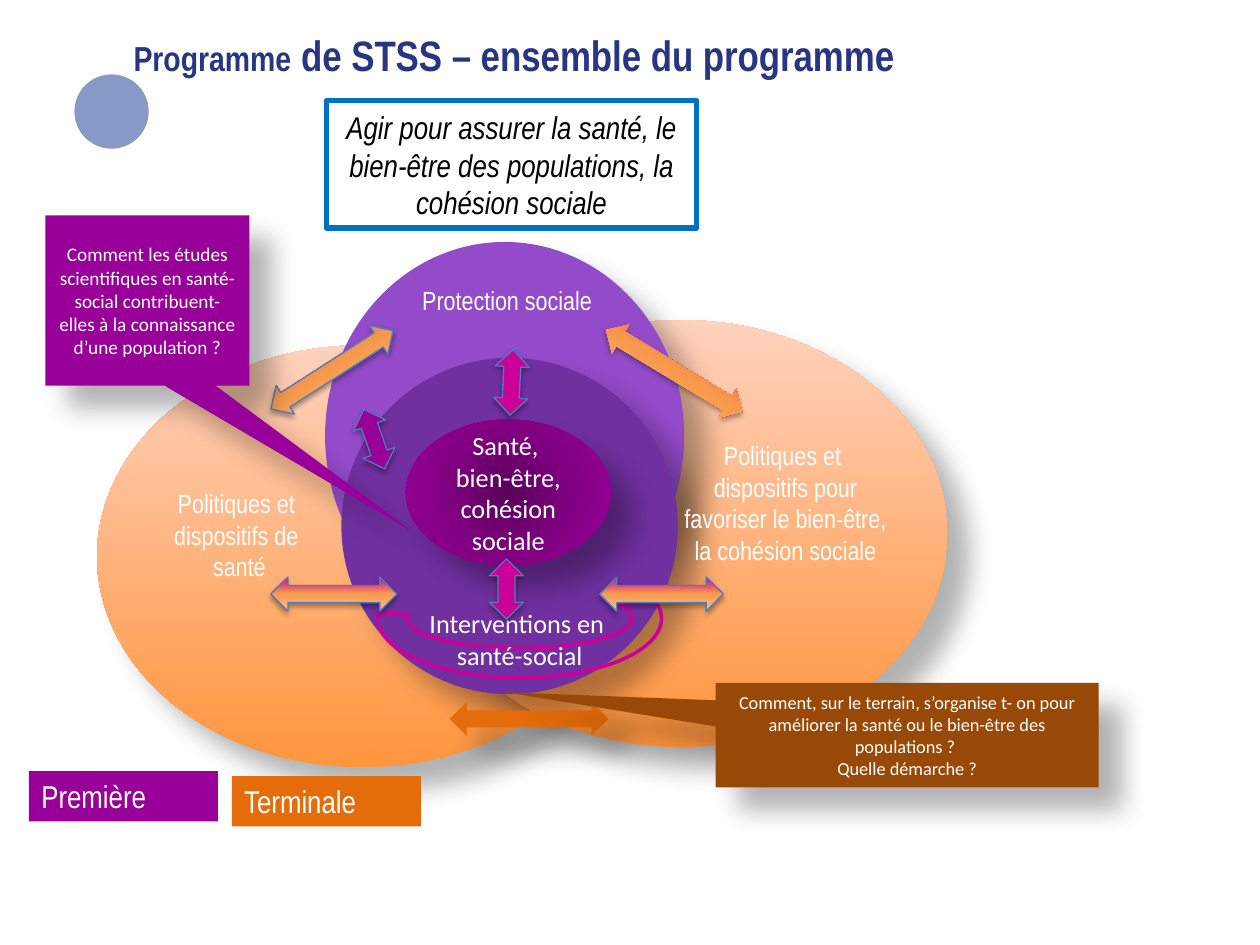
from pptx import Presentation
from pptx.dml.color import RGBColor
from pptx.enum.shapes import MSO_SHAPE
from pptx.enum.text import MSO_ANCHOR, MSO_AUTO_SIZE, PP_ALIGN
from pptx.oxml import parse_xml
from pptx.oxml.ns import nsdecls, qn
from pptx.util import Inches, Pt

COLS, ROWS = 100, 75
WIDTH, HEIGHT = Inches(10), Inches(7.5)
NARROW, CALIBRI = "Arial Narrow", "Calibri"
PURPLE, PINK, ORANGE, WHITE, BLUE = "990099", "CC0099", "E46C0A", "FFFFFF", "4B7EBC"
PEACH = [(0, "FF953E"), (100, "FFD2BD")]
SUNSET = [(0, PINK), (48, "F7994C"), (100, "FAC090")]
PLUM = [(0, "5B005B"), (50, "810081"), (100, PURPLE)]
DEEP, SOFT = (30, 15, 18, 45), (35, 3.1, 1.8, 90)


def rgb(value):
    """Turn a hex string into a colour."""
    return RGBColor.from_string(value)


def place(box, x, y, w, h):
    """Convert grid units relative to a box into slide lengths."""
    col, row = WIDTH / COLS, HEIGHT / ROWS
    return [int(v) for v in ((box[0] + x) * col, (box[1] + y) * row, w * col, h * row)]


def set_gradient(sp, stops, radial):
    """Fill a shape with a vertical or a radial gradient."""
    sp.fill.solid()
    old = sp._element.spPr.find(qn("a:solidFill"))
    marks = "".join(f'<a:gs pos="{pos * 1000}"><a:srgbClr val="{c}"/></a:gs>' for pos, c in stops)
    way = ('<a:path path="circle"><a:fillToRect l="50000" t="50000" r="50000" b="50000"/></a:path>'
           if radial else '<a:lin ang="16200000" scaled="0"/>')
    xml = f'<a:gradFill {nsdecls("a")} rotWithShape="1"><a:gsLst>{marks}</a:gsLst>{way}</a:gradFill>'
    old.getparent().replace(old, parse_xml(xml))


def set_shadow(sp, shadow):
    """Give a shape an outer shadow, or none."""
    sp.shadow.inherit = False
    if shadow:
        alpha, blur, dist, angle = shadow
        sp._element.spPr.find(qn("a:effectLst")).append(parse_xml(
            f'<a:outerShdw {nsdecls("a")} blurRad="{Pt(blur)}" dist="{Pt(dist)}" '
            f'dir="{angle * 60000}" algn="ctr" rotWithShape="0"><a:srgbClr val="000000">'
            f'<a:alpha val="{alpha * 1000}"/></a:srgbClr></a:outerShdw>'))


def add_part(s, kind, where, fill=None, line=None, shadow=None, adj=(), rotation=0, radial=False):
    """Add a preset shape with its fill, line, shadow and adjustments."""
    sp = s.shapes.add_shape(kind, *where)
    sp.rotation = rotation
    for i, value in enumerate(adj):
        sp.adjustments[i] = value
    if isinstance(fill, list):
        set_gradient(sp, fill, radial)
    elif fill:
        sp.fill.solid()
        sp.fill.fore_color.rgb = rgb(fill)
    else:
        sp.fill.background()
    if line:
        sp.line.color.rgb = rgb(line[0])
        sp.line.width = Pt(line[1])
    else:
        sp.line.fill.background()
    set_shadow(sp, shadow)
    return sp


def write(sp, paragraphs, size, font, color=WHITE, align=PP_ALIGN.CENTER,
          anchor=MSO_ANCHOR.MIDDLE, wrap=True, italic=None):
    """Write evenly formatted paragraphs into a shape."""
    tf = sp.text_frame
    tf.word_wrap, tf.vertical_anchor = wrap, anchor
    for i, text in enumerate(paragraphs):
        p = tf.add_paragraph() if i else tf.paragraphs[0]
        p.text, p.alignment = text, align
        p.font.size, p.font.name, p.font.italic = Pt(size), font, italic
        p.font.color.rgb = rgb(color)


def add_header(s, box):
    """Place the dot, the title and the framed aim."""
    add_part(s, MSO_SHAPE.OVAL, place(box, 0, 3.6, 5.9, 5.9), "879AC6")
    title = s.shapes.title
    title.left, title.top, title.width, title.height = place(box, 4.7, 0, 68.4, 4)
    tf = title.text_frame
    tf.margin_left = tf.margin_right = tf.margin_top = tf.margin_bottom = 0
    tf.vertical_anchor, tf.auto_size = MSO_ANCHOR.MIDDLE, MSO_AUTO_SIZE.NONE
    p = tf.paragraphs[0]
    p.alignment = PP_ALIGN.LEFT
    p.font.name, p.font.bold, p.font.color.rgb = NARROW, True, rgb("283583")
    for text, size in (("Programme", 19.8), (" de STSS – ensemble du programme", 24.3)):
        r = p.add_run()
        r.text, r.font.size = text, Pt(size)
    aim = add_part(s, MSO_SHAPE.RECTANGLE, place(box, 20, 5.7, 29.4, 10.1), line=("0070C0", 3))
    write(aim, ["Agir pour assurer la santé, le bien-être des populations, la cohésion sociale"],
          18, NARROW, "000000", italic=True)


def add_diagram(s, box):
    """Place the overlapping ellipses with their labels and arrows."""
    for where, fill in (((0, 8.2, 42.1, 33.5), PEACH), ((25.2, 6.2, 42.3, 33.9), PEACH),
                        ((18.1, 0, 28.5, 30.8), "934BC9"), ((19.4, 9.2, 26.7, 26.7), "7030A0")):
        add_part(s, MSO_SHAPE.OVAL, place(box, *where), fill, shadow=DEEP)
    core = add_part(s, MSO_SHAPE.OVAL, place(box, 24.5, 14.1, 16.3, 11.6), PLUM,
                    shadow=DEEP, radial=True)
    write(core, ["Santé, \nbien-être, cohésion sociale"], 15, CALIBRI)

    labels = (
        ((-6.4, 19, 35.4, 8.6), ["Politiques et ", "dispositifs de \nsanté"]),
        ((24.7, 2.9, 15.7, 3.5), ["Protection sociale"]),
        ((40.4, 15.2, 28.5, 11.1),
         ["Politiques et ", "dispositifs pour\n favoriser le bien-être, \nla cohésion sociale"]),
    )
    for where, paragraphs in labels:
        write(s.shapes.add_textbox(*place(box, *where)), paragraphs, 15, NARROW,
              anchor=MSO_ANCHOR.TOP, wrap=False)

    arc = add_part(s, MSO_SHAPE.BLOCK_ARC, place(box, 22.3, 25.2, 22.5, 9.4),
                   line=(PINK, 2), adj=(211.29, 109.29, 0.25))
    write(arc, ["Interventions en \nsanté-social"], 15, CALIBRI)

    edge = (BLUE, 0.75)
    arrows = (
        (39.9, 26.6, 9.8, 180, SUNSET, edge, SOFT),
        (13.8, 26.6, 10, 180, SUNSET, edge, SOFT),
        (28, 36.5, 12.6, 180, ORANGE, None, DEEP),
        (39.5, 8.9, 12.6, 211.1, SUNSET, None, SOFT),
        (12.9, 8.8, 11.5, 147.3, SUNSET, edge, SOFT),
        (30.3, 9.8, 5.2, 272.9, PINK, edge, SOFT),
        (19.5, 14.3, 5, 250.8, PURPLE, edge, SOFT),
        (30.1, 26.2, 4.8, 270, PINK, edge, SOFT),
    )
    for x, y, length, rotation, fill, line, shadow in arrows:
        add_part(s, MSO_SHAPE.LEFT_RIGHT_ARROW, place(box, x, y, length, 2.7),
                 fill, line, shadow, rotation=rotation)


def add_callout(s, box, text, size, fill, adj):
    """Fill a box with a question whose tail points at the diagram."""
    sp = add_part(s, MSO_SHAPE.RECTANGULAR_CALLOUT, place(box, 0, 0, *box[2:]),
                  fill, shadow=DEEP, adj=adj)
    write(sp, [text], size, CALIBRI)


def add_legend(s, box):
    """Place the two school-year tags."""
    tags = ((0, 0, "Première", PURPLE), (16.1, 0.4, "Terminale", ORANGE))
    for x, y, text, fill in tags:
        sp = add_part(s, MSO_SHAPE.RECTANGLE, place(box, x, y, 15, 4), fill)
        write(sp, [text], 18, NARROW, align=PP_ALIGN.LEFT)


def main():
    """Build the slide and save it."""
    prs = Presentation()
    prs.slide_width, prs.slide_height = WIDTH, HEIGHT
    s = prs.slides.add_slide(prs.slide_layouts[5])
    add_header(s, (5.9, 2.3, 73.1, 15.8))
    add_diagram(s, (7.7, 19.2, 67.5, 41.7))
    add_callout(s, (3.6, 17.1, 16.2, 13.5),
                "Comment les études scientifiques en santé-social contribuent-elles "
                "à la connaissance d’une population ?", 11, PURPLE, (1.3, 1.36))
    add_callout(s, (56.8, 54.2, 30.4, 8.3),
                "Comment, sur le terrain, s’organise t- on pour améliorer la santé ou "
                "le bien-être des populations ? \nQuelle démarche ?", 10.5, "984807", (-1.05, -0.41))
    add_legend(s, (2.3, 61.2, 31.1, 4.4))
    prs.save("out.pptx")


if __name__ == "__main__":
    main()
